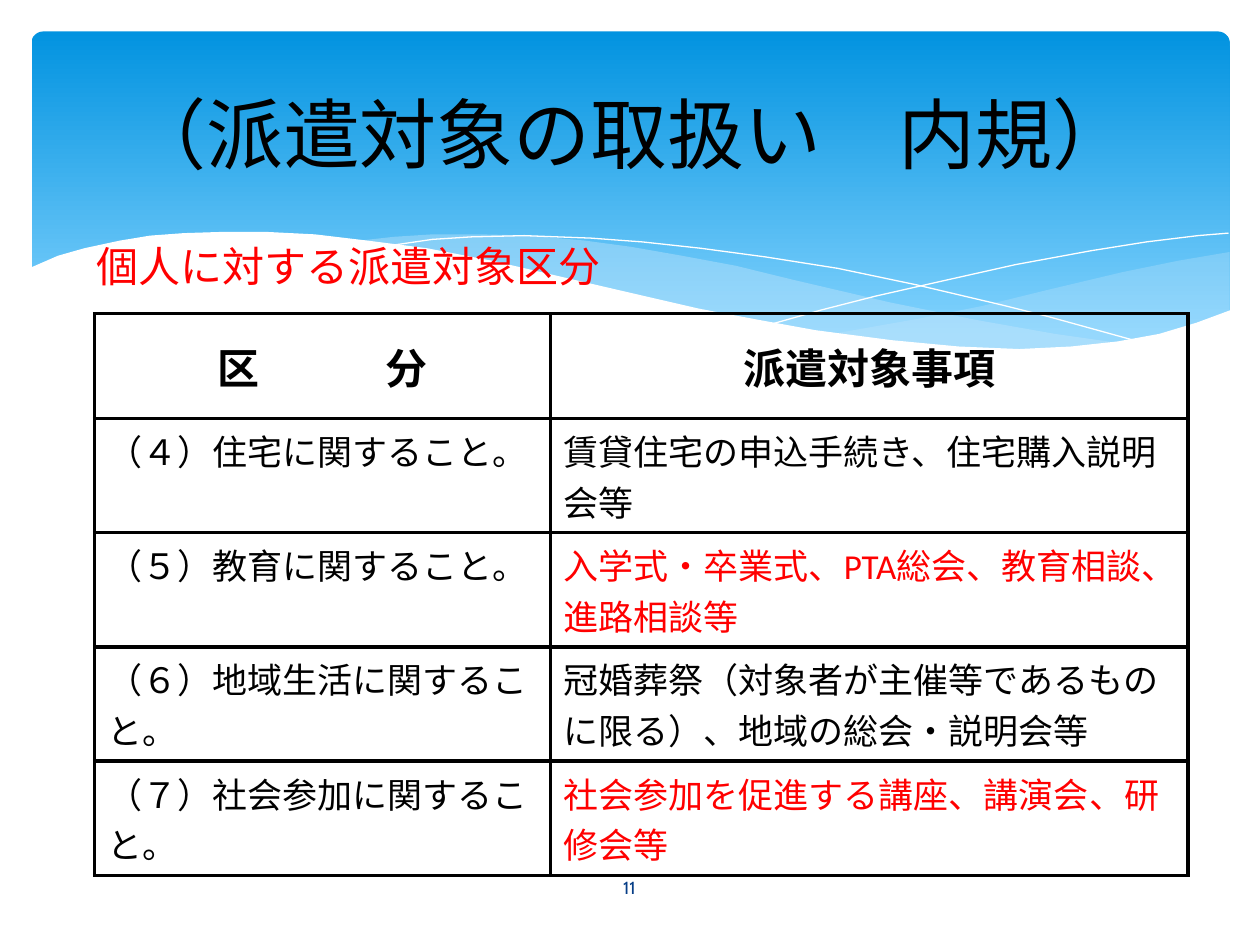
import lxml.etree
import pptx
import pptx.dml.color
import pptx.enum.shapes
import pptx.enum.text
import pptx.oxml.ns
import pptx.util

Inches = pptx.util.Inches
Pt = pptx.util.Pt
RGBColor = pptx.dml.color.RGBColor
ALIGN = pptx.enum.text.PP_ALIGN
ANCHOR = pptx.enum.text.MSO_ANCHOR
qn = pptx.oxml.ns.qn

BLACK = RGBColor(0x00, 0x00, 0x00)
WHITE = RGBColor(0xFF, 0xFF, 0xFF)
RED = RGBColor(0xFF, 0x00, 0x00)
NAVY = RGBColor(0x07, 0x3E, 0x87)
SKY_DARK = RGBColor(0x02, 0x93, 0xE0)
SKY_LIGHT = RGBColor(0x83, 0xD3, 0xFE)
PALE = RGBColor(0xC6, 0xE7, 0xFC)

RIGHT_SWELL = [
    (9.76, 2), (9.35, 2.07), (8.91, 2.16), (8.32, 2.3), (7.79, 2.43), (7.29, 2.53),
    (6.61, 2.65), (7.05, 2.71), (7.45, 2.75), (7.92, 2.77), (8.35, 2.77),
    (8.81, 2.73), (9.21, 2.65), (9.49, 2.57), (9.76, 2.47)]
MIDDLE_SWELL = [
    (8.93, 2.73), (8.37, 2.65), (7.75, 2.54), (7.06, 2.4), (6.29, 2.22), (5.84, 2.11),
    (5.41, 2.03), (5.01, 1.96), (4.64, 1.91), (4.2, 1.87), (3.8, 1.86), (3.44, 1.86),
    (3.13, 1.88), (2.86, 1.91), (3.42, 1.99), (4.04, 2.11), (4.49, 2.22), (5.3, 2.4),
    (6.01, 2.55), (6.5, 2.64), (6.95, 2.7), (7.36, 2.75), (7.73, 2.78), (8.07, 2.79),
    (8.48, 2.78), (8.93, 2.73)]
FALLING_LINE = [
    (3.09, 1.95), (3.43, 1.9), (3.74, 1.88), (4.16, 1.87), (4.69, 1.89), (5.1, 1.92),
    (5.56, 1.97), (6.08, 2.04), (6.65, 2.13), (7.27, 2.26), (7.95, 2.42),
    (8.31, 2.51), (9.07, 2.72)]
RISING_LINE = [
    (6.13, 2.57), (6.52, 2.46), (6.95, 2.35), (7.48, 2.23), (8.06, 2.1),
    (8.66, 1.99), (9.1, 1.92), (9.51, 1.87), (9.75, 1.85)]
WHITE_WAVE = [
    (9.77, 2.46), (9.5, 2.56), (9.2, 2.65), (8.87, 2.71), (8.5, 2.75), (8.09, 2.77),
    (7.61, 2.75), (7.08, 2.7), (6.47, 2.62), (6.03, 2.54), (5.55, 2.45), (5.03, 2.33),
    (4.47, 2.2), (3.91, 2.07), (3.39, 1.97), (2.92, 1.91), (2.5, 1.86), (2.11, 1.84),
    (1.77, 1.84), (1.46, 1.85), (1.19, 1.87), (0.95, 1.91), (0.67, 1.97), (0.46, 2.03),
    (0.23, 2.13), (0.23, 3.29), (9.77, 3.29)]

ROWS = [
    ("区\u3000\u3000\u3000分".replace("\u3000", "　"), "派遣対象事項", BLACK),
    ("（４）住宅に関すること。", "賃貸住宅の申込手続き、住宅購入説明会等", BLACK),
    ("（５）教育に関すること。", "入学式・卒業式、PTA総会、教育相談、進路相談等", RED),
    ("（６）地域生活に関すること。", "冠婚葬祭（対象者が主催等であるものに限る）、地域の総会・説明会等", BLACK),
    ("（７）社会参加に関すること。", "社会参加を促進する講座、講演会、研修会等", RED),
]


def add_run(p, text, size, color, font="Cabin", bold=False):
    """Append one formatted run to a paragraph."""
    r = p.add_run()
    r.text = text
    r.font.size = Pt(size)
    r.font.name = font
    r.font.bold = bold
    r.font.color.rgb = color


def add_wave(slide, points, fill=None, alpha=100):
    """Draw a filled wave, or a white hairline when no fill is given."""
    points = [(Inches(x), Inches(y)) for x, y in points]
    builder = slide.shapes.build_freeform(*points[0])
    builder.add_line_segments(points[1:], close=fill is not None)
    sp = builder.convert_to_shape()
    sp.shadow.inherit = False
    if fill is None:
        sp.fill.background()
        sp.line.color.rgb = WHITE
        sp.line.width = Pt(0)
        return
    sp.fill.solid()
    sp.fill.fore_color.rgb = fill
    sp.line.fill.background()
    if alpha < 100:
        color = sp.element.spPr.find(qn("a:solidFill"))[0]
        lxml.etree.SubElement(color, qn("a:alpha"), val=str(alpha * 1000))


def add_banner(slide, left, top, width, height):
    """Draw the gradient banner and the waves along its lower edge."""
    sp = slide.shapes.add_shape(
        pptx.enum.shapes.MSO_SHAPE.ROUNDED_RECTANGLE, left, top, width, height)
    sp.adjustments[0] = 0.034
    sp.shadow.inherit = False
    sp.line.fill.background()
    sp.fill.gradient()
    sp.fill.gradient_angle = 270
    stops = zip(sp.fill.gradient_stops, (0, 0.9), (SKY_DARK, SKY_LIGHT))
    for stop, position, color in stops:
        stop.position = position
        stop.color.rgb = color
    add_wave(slide, RIGHT_SWELL, PALE, 29)
    add_wave(slide, MIDDLE_SWELL, PALE, 40)
    add_wave(slide, FALLING_LINE)
    add_wave(slide, RISING_LINE)
    add_wave(slide, WHITE_WAVE, WHITE)


def place_title(slide, left, top, width, height):
    """Move the title placeholder in front of the banner and fill it."""
    sp = slide.shapes.title
    slide.shapes.element.append(sp.element)
    sp.left, sp.top, sp.width, sp.height = left, top, width, height
    tf = sp.text_frame
    tf.vertical_anchor = ANCHOR.MIDDLE
    p = tf.paragraphs[0]
    p.alignment = ALIGN.CENTER
    add_run(p, "（派遣対象の取扱い　内規）", 44, BLACK)


def add_label(slide, left, top, width, height, text, size, color,
              align=ALIGN.LEFT, anchor=ANCHOR.TOP):
    """Add a one-line text box."""
    tf = slide.shapes.add_textbox(left, top, width, height).text_frame
    tf.word_wrap = True
    tf.vertical_anchor = anchor
    p = tf.paragraphs[0]
    p.alignment = align
    add_run(p, text, size, color)


def set_borders(cell):
    """Give a cell solid black borders on all sides."""
    tc_pr = cell._tc.get_or_add_tcPr()
    for side in ("a:lnL", "a:lnR", "a:lnT", "a:lnB"):
        ln = lxml.etree.SubElement(tc_pr, qn(side), w=str(Pt(2.25)))
        fill = lxml.etree.SubElement(ln, qn("a:solidFill"))
        lxml.etree.SubElement(fill, qn("a:srgbClr"), val=str(BLACK))


def add_category_table(slide, left, top, width, height):
    """Add the table of categories and the matters they cover."""
    table = slide.shapes.add_table(len(ROWS), 2, left, top, width, height).table
    table.first_row = table.horz_banding = False
    table.columns[0].width = Inches(3.62)
    table.columns[1].width = width - Inches(3.62)
    for row, row_height in zip(table.rows, (0.83, 0.84, 0.82, 0.88, 0.77)):
        row.height = Inches(row_height)
    for i, (category, matters, color) in enumerate(ROWS):
        header = i == 0
        size = 24 if header else 20
        for j, (text, text_color) in enumerate(((category, BLACK), (matters, color))):
            cell = table.cell(i, j)
            set_borders(cell)
            cell.fill.background()
            cell.vertical_anchor = ANCHOR.MIDDLE if header else ANCHOR.TOP
            p = cell.text_frame.paragraphs[0]
            p.alignment = ALIGN.CENTER if header else ALIGN.LEFT
            p.space_before = Pt(size * 0.2)
            add_run(p, text, size, text_color, "Calibri", header)


def main():
    """Build and save the slide."""
    prs = pptx.Presentation()
    prs.slide_width, prs.slide_height = Inches(10), Inches(7.5)
    slide = prs.slides.add_slide(prs.slide_layouts[5])
    add_banner(slide, Inches(0.25), Inches(0.25), Inches(9.51), Inches(2.7))
    add_label(slide, Inches(4.36), Inches(6.84), Inches(1.27), Inches(0.4),
              "11", 10, NAVY, ALIGN.CENTER, ANCHOR.MIDDLE)
    place_title(slide, Inches(0.5), Inches(0.37), Inches(9), Inches(1.37))
    add_category_table(slide, Inches(0.75), Inches(2.49), Inches(8.68), Inches(4.13))
    add_label(slide, Inches(0.67), Inches(1.86), Inches(4.26), Inches(0.5),
              "個人に対する派遣対象区分", 24, RED)
    prs.save("out.pptx")


if __name__ == "__main__":
    main()
